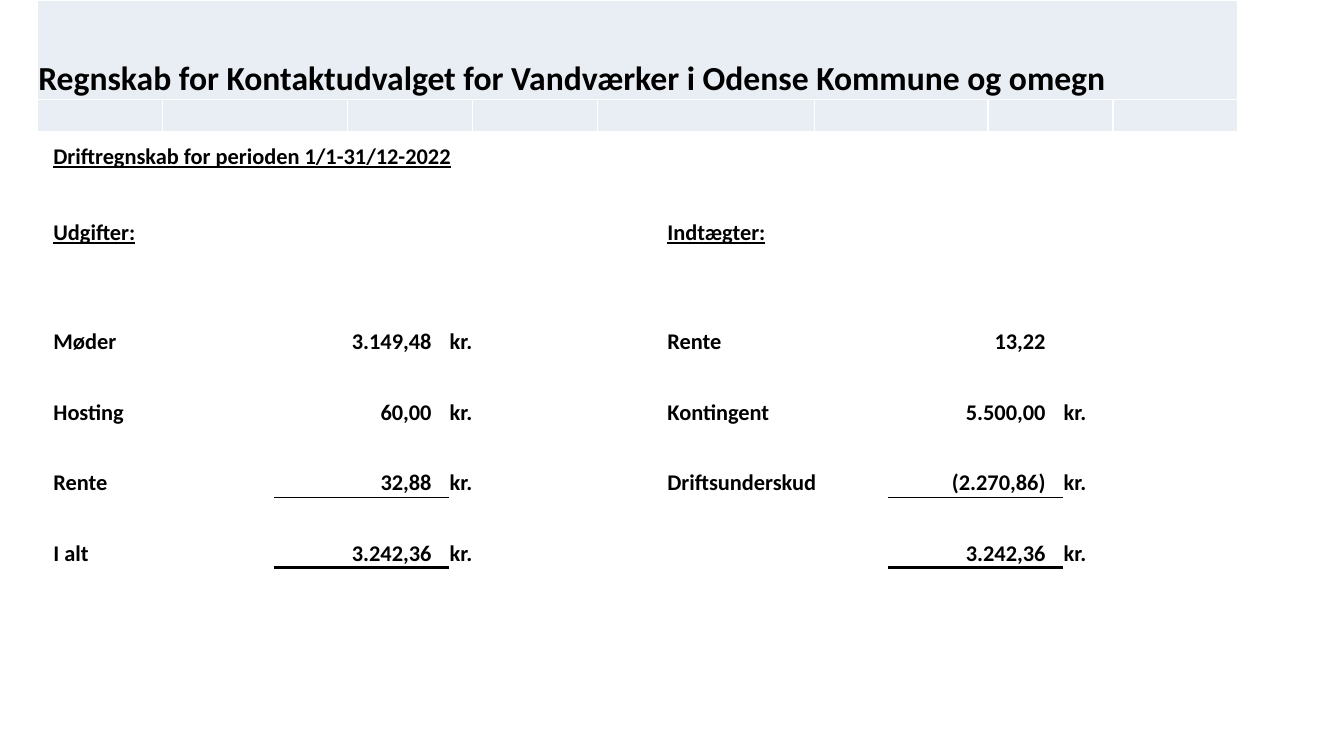
"""Build the yearly accounts slide with a title band and a ledger table."""
from lxml import etree
from pptx import Presentation
from pptx.dml.color import RGBColor
from pptx.enum.text import MSO_ANCHOR, PP_ALIGN
from pptx.oxml.ns import qn
from pptx.util import Inches, Pt

BOTTOM = MSO_ANCHOR.BOTTOM
LEFT, RIGHT = PP_ALIGN.LEFT, PP_ALIGN.RIGHT
FONT = "Calibri"
PLAIN = "{2D5ABB26-0587-4C30-8999-92F81FD0307C}"
COLORS = {"ink": "000000", "band": "E9EDF4", "grid": "FFFFFF"}

TITLE = "Regnskab for Kontaktudvalget for Vandværker i Odense Kommune og omegn"
PERIOD = "Driftregnskab for perioden 1/1-31/12-2022"
SIDES = [
    (0, "Udgifter:", [
        ("Møder", "3.149,48", "kr."),
        ("Hosting", "60,00", "kr."),
        ("Rente", "32,88", "kr."),
        ("I alt", "3.242,36", "kr."),
    ]),
    (4, "Indtægter:", [
        ("Rente", "13,22", ""),
        ("Kontingent", "5.500,00", "kr."),
        ("Driftsunderskud", "(2.270,86)", "kr."),
        ("", "3.242,36", "kr."),
    ]),
]
HEAD, FIRST = 2, 4
RULES = {6: {"B": 0.5}, 7: {"T": 0.5, "B": 2}, 8: {"T": 2}}

BAND = {"at": (0.37, 0), "cols": [1.24, 1.84, 1.24, 1.24, 2.15, 1.72, 1.24, 1.24],
        "rows": [0.99, 0.32]}
LEDGER = {"at": (0.52, 1.31), "cols": [2.2, 1.73, 1.08, 1.08, 2.2, 1.73, 1.08],
          "rows": [0.38] * 4 + [0.7] * 4 + [0.4]}


def add_grid(slide, plan):
    cols, rows = plan["cols"], plan["rows"]
    box = [Inches(n) for n in (*plan["at"], sum(cols), sum(rows))]
    table = slide.shapes.add_table(len(rows), len(cols), *box).table
    table.first_row = table.horz_banding = False
    table._tbl.tblPr.find(qn("a:tableStyleId")).text = PLAIN
    for col, size in zip(table.columns, cols):
        col.width = Inches(size)
    for row, size in zip(table.rows, rows):
        row.height = Inches(size)
    for cell in table.iter_cells():
        cell.vertical_anchor = BOTTOM
        cell.margin_left = cell.margin_right = cell.margin_top = Inches(0.01)
        cell.margin_bottom = 0
    return table


def add_edges(cell, edges, color):
    props = cell._tc.get_or_add_tcPr()
    for side, size in edges.items():
        line = etree.SubElement(props, qn("a:ln" + side), w=str(Pt(size)))
        fill = etree.SubElement(line, qn("a:solidFill"))
        etree.SubElement(fill, qn("a:srgbClr"), val=color)


def write(cell, text, size=16, under=False, align=LEFT):
    if not text:
        return
    para = cell.text_frame.paragraphs[0]
    para.alignment = align
    run = para.add_run()
    run.text = text
    font = run.font
    font.name, font.size, font.bold, font.underline = FONT, Pt(size), True, under
    font.color.rgb = RGBColor.from_string(COLORS["ink"])


def add_band(slide):
    table = add_grid(slide, BAND)
    for cell in table.iter_cells():
        add_edges(cell, dict.fromkeys("LRTB", 1), COLORS["grid"])
        cell.fill.solid()
        cell.fill.fore_color.rgb = RGBColor.from_string(COLORS["band"])
    table.cell(0, 0).merge(table.cell(0, len(BAND["cols"]) - 1))
    write(table.cell(0, 0), TITLE, size=24)


def add_ledger(slide):
    table = add_grid(slide, LEDGER)
    table.cell(0, 0).merge(table.cell(0, 2))
    write(table.cell(0, 0), PERIOD, under=True)
    for col, head, items in SIDES:
        write(table.cell(HEAD, col), head, under=True)
        for row, (name, sum_, unit) in enumerate(items, FIRST):
            write(table.cell(row, col), name)
            cell = table.cell(row, col + 1)
            cell.margin_right = Inches(0.17)
            write(cell, sum_, align=RIGHT)
            write(table.cell(row, col + 2), unit)
        for row, edges in RULES.items():
            add_edges(table.cell(row, col + 1), edges, COLORS["ink"])


def main():
    deck = Presentation()
    deck.slide_width, deck.slide_height = Inches(13.33), Inches(7.5)
    slide = deck.slides.add_slide(deck.slide_layouts[6])
    add_band(slide)
    add_ledger(slide)
    deck.save("out.pptx")


if __name__ == "__main__":
    main()
